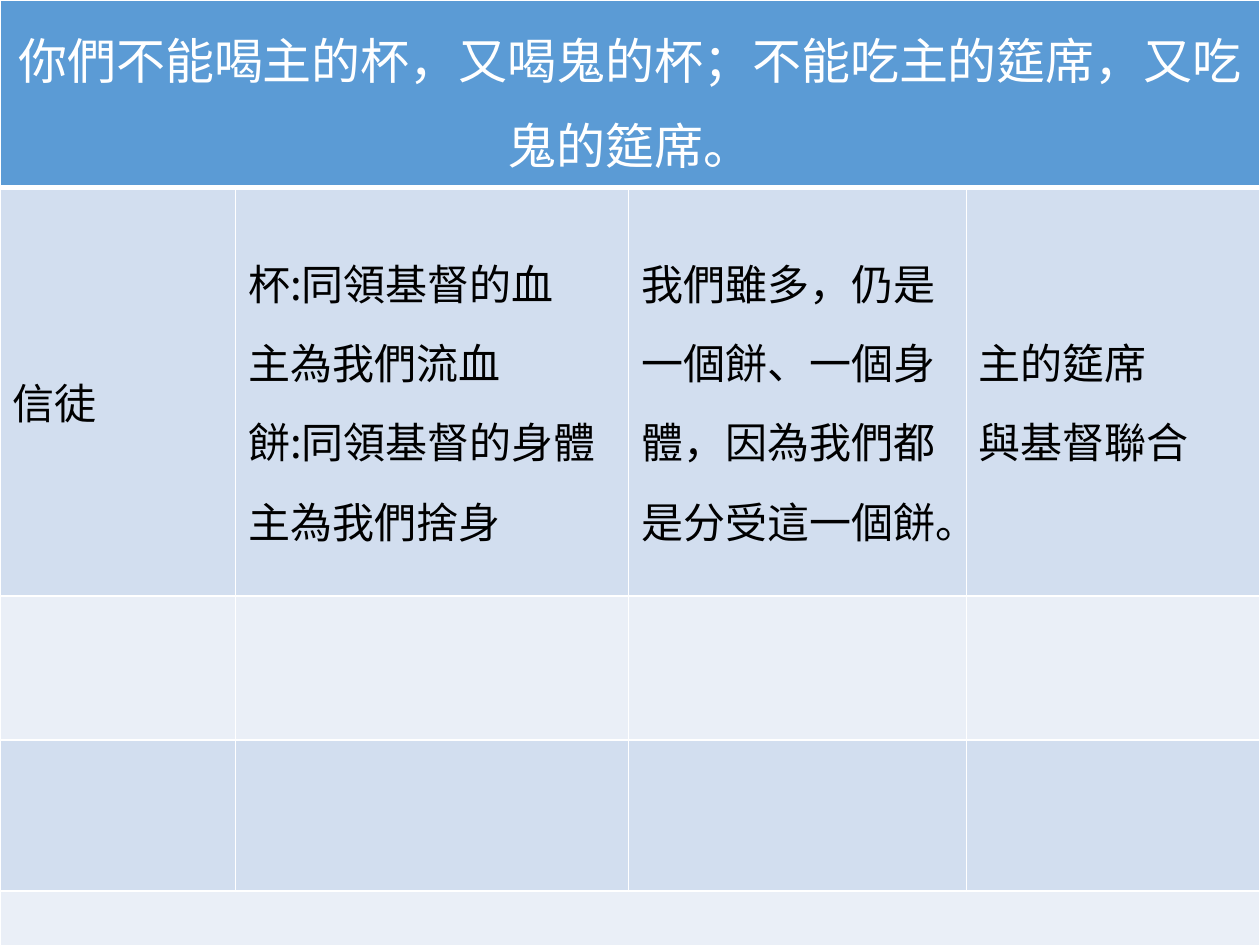
from lxml.etree import SubElement
from pptx import Presentation
from pptx.dml.color import RGBColor
from pptx.enum.text import MSO_ANCHOR, PP_ALIGN
from pptx.oxml.ns import qn
from pptx.util import Pt

FONT = "Noto Sans CJK SC"
WHITE, BLACK = "FFFFFF", "000000"
HEADER_FILL = "5B9BD5"
BAND_FILLS = ["EAEFF7", "D2DEEF"]
COLUMN_WIDTHS = [134.64, 224.64, 192.96, 167.76]
ROW_HEIGHTS = [107.28, 171.36, 82.08, 86.4, 92.88]
MERGED_ROWS = [0, 4]
ROWS = [
    ["你們不能喝主的杯，又喝鬼的杯；不能吃主的筵席，又吃鬼的筵席。"],
    [
        "信徒",
        "杯:同領基督的血\n主為我們流血\n餅:同領基督的身體\n主為我們捨身",
        "我們雖多，仍是一個餅、一個身體，因為我們都是分受這一個餅。",
        "主的筵席\n與基督聯合",
    ],
]


def color(value):
    """Turn a hex string into a colour."""
    return RGBColor.from_string(value)


def add_borders(cell, bottom_width):
    """Draw white lines around a cell."""
    properties = cell._tc.get_or_add_tcPr()
    for side, width in (("L", 1), ("R", 1), ("T", 1), ("B", bottom_width)):
        line = SubElement(properties, qn(f"a:ln{side}"), w=str(Pt(width)))
        fill = SubElement(line, qn("a:solidFill"))
        SubElement(fill, qn("a:srgbClr"), val=WHITE)


def write_text(cell, text, is_header):
    """Fill a cell with formatted paragraphs."""
    cell.text_frame.text = text
    for paragraph in cell.text_frame.paragraphs:
        paragraph.line_spacing = 1.2 if is_header else 1.3
        paragraph.alignment = PP_ALIGN.CENTER if is_header else PP_ALIGN.LEFT
        for run in paragraph.runs:
            run.font.name = FONT
            run.font.size = Pt(28 if is_header else 24)
            run.font.bold = False
            run.font.color.rgb = color(WHITE if is_header else BLACK)
            SubElement(run.font._element, qn("a:ea"), typeface=FONT)


def main():
    """Build the slide with its comparison table."""
    presentation = Presentation()
    presentation.slide_width, presentation.slide_height = Pt(720), Pt(540)
    slide = presentation.slides.add_slide(presentation.slide_layouts[6])
    table = slide.shapes.add_table(
        len(ROW_HEIGHTS), len(COLUMN_WIDTHS), 0, 0, Pt(720), Pt(540)
    ).table
    for column, width in zip(table.columns, COLUMN_WIDTHS):
        column.width = Pt(width)
    for index, height in enumerate(ROW_HEIGHTS):
        row = table.rows[index]
        row.height = Pt(height)
        is_header = index == 0
        for cell in row.cells:
            add_borders(cell, 3 if is_header else 1)
            cell.fill.solid()
            cell.fill.fore_color.rgb = color(HEADER_FILL if is_header else BAND_FILLS[index % 2])
            cell.vertical_anchor = MSO_ANCHOR.MIDDLE
    for index in MERGED_ROWS:
        table.cell(index, 0).merge(table.cell(index, len(COLUMN_WIDTHS) - 1))
    for index, texts in enumerate(ROWS):
        for column, text in enumerate(texts):
            write_text(table.cell(index, column), text, index == 0)
    presentation.save("out.pptx")


if __name__ == "__main__":
    main()
